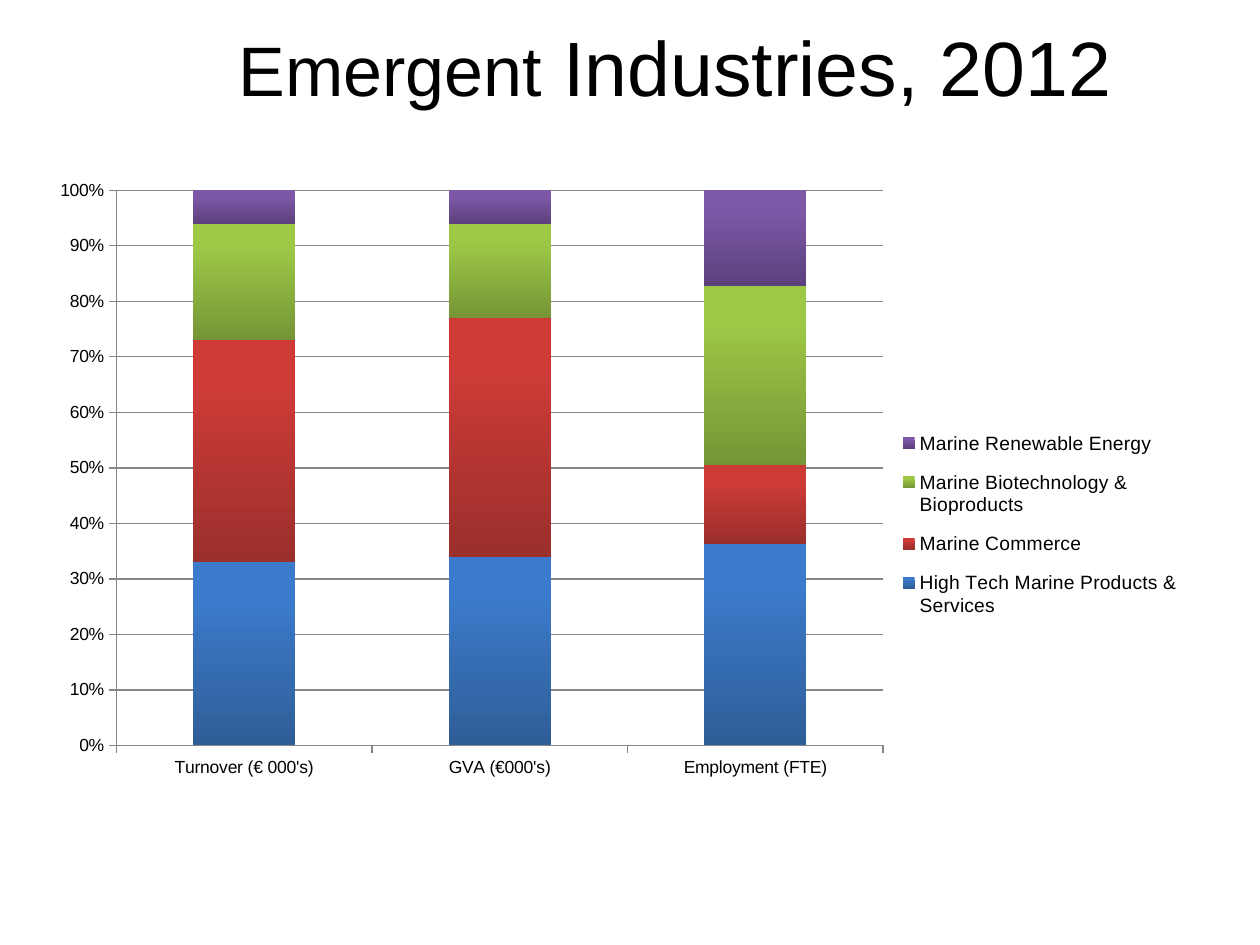
from lxml import etree
from pptx import Presentation
from pptx.chart.data import CategoryChartData
from pptx.dml.color import RGBColor
from pptx.enum.chart import XL_CHART_TYPE, XL_LEGEND_POSITION, XL_TICK_MARK
from pptx.enum.text import MSO_ANCHOR, PP_ALIGN
from pptx.oxml.ns import qn
from pptx.util import Pt

FONT = "Arial"
INK = "000000"
GRID_GREY = "868686"
MEASURES = ["Turnover (€ 000's)", "GVA (€000's)", "Employment (FTE)"]
# Industry, percentage shares, gradient top and bottom
INDUSTRIES = [
    ("High Tech Marine Products & Services", (33, 34, 36), "3C7ACB", "2E5E97"),
    ("Marine Commerce", (40, 43, 14), "CE3B37", "9B2F2C"),
    ("Marine Biotechnology & Bioproducts", (21, 17, 32), "9DC846", "769536"),
    ("Marine Renewable Energy", (6, 6, 17), "7D58A7", "5D417E"),
]


def colour(hex_string):
    return RGBColor.from_string(hex_string)


def style_font(font, size):
    font.name = FONT
    font.size = Pt(size)
    font.color.rgb = colour(INK)


def add_title(slide, runs):
    title = slide.shapes.title
    title.left, title.top, title.width, title.height = Pt(88), Pt(3.5), Pt(596), Pt(68)
    frame = title.text_frame
    frame.word_wrap = True
    frame.vertical_anchor = MSO_ANCHOR.MIDDLE
    paragraph = frame.paragraphs[0]
    paragraph.alignment = PP_ALIGN.CENTER
    for text, size in runs:
        run = paragraph.add_run()
        run.text = text
        style_font(run.font, size)


def place(element, index, inner=False, **fractions):
    """Give a chart part a fixed place, in fractions of the chart."""
    for old in element.findall(qn("c:layout")):
        element.remove(old)
    layout = etree.Element(qn("c:layout"))
    manual = etree.SubElement(layout, qn("c:manualLayout"))
    if inner:
        etree.SubElement(manual, qn("c:layoutTarget")).set("val", "inner")
    for mode in ("xMode", "yMode"):
        etree.SubElement(manual, qn(f"c:{mode}")).set("val", "edge")
    for name, value in fractions.items():
        etree.SubElement(manual, qn(f"c:{name}")).set("val", str(value))
    element.insert(index, layout)


def shade(fill, top, bottom):
    fill.gradient()
    fill.gradient_angle = 270
    for stop, position, tone in zip(fill.gradient_stops, (0.2, 1), (top, bottom)):
        stop.position = position
        stop.color.rgb = colour(tone)


def style_axis(axis):
    style_font(axis.tick_labels.font, 10)
    axis.major_tick_mark = XL_TICK_MARK.OUTSIDE
    axis.minor_tick_mark = XL_TICK_MARK.NONE
    axis.format.line.color.rgb = colour(GRID_GREY)
    axis.format.line.width = Pt(0.75)


def add_share_chart(slide):
    data = CategoryChartData()
    data.categories = MEASURES
    for industry, shares, _, _ in INDUSTRIES:
        data.add_series(industry, shares)
    chart = slide.shapes.add_chart(
        XL_CHART_TYPE.COLUMN_STACKED_100, Pt(20), Pt(94.5), Pt(664), Pt(356.5), data
    ).chart
    chart.has_title = False
    style_font(chart.font, 10)

    # Columns
    plot = chart.plots[0]
    plot.gap_width = 150
    plot.overlap = 100
    plot.vary_by_categories = False
    for series, (_, _, top, bottom) in zip(plot.series, INDUSTRIES):
        shade(series.format.fill, top, bottom)
        series.format.line.fill.background()

    # Axes and gridlines
    style_axis(chart.category_axis)
    shares_axis = chart.value_axis
    style_axis(shares_axis)
    shares_axis.minimum_scale, shares_axis.maximum_scale = 0, 1
    shares_axis.major_unit = 0.1
    shares_axis.tick_labels.number_format = "0%"
    shares_axis.tick_labels.number_format_is_linked = False
    shares_axis.has_major_gridlines = True
    gridline = shares_axis.major_gridlines.format.line
    gridline.color.rgb = colour(GRID_GREY)
    gridline.width = Pt(0.75)

    # Legend
    chart.has_legend = True
    legend = chart.legend
    legend.position = XL_LEGEND_POSITION.RIGHT
    legend.include_in_layout = False
    style_font(legend.font, 11)

    plot_area = chart.element.find(".//" + qn("c:plotArea"))
    place(plot_area, 0, inner=True, x=0.07, y=0.04, w=0.66, h=0.89)
    place(chart.element.find(".//" + qn("c:legend")), 1, x=0.74, y=0.4, w=0.25, h=0.35)


def main():
    deck = Presentation()
    deck.slide_width, deck.slide_height = Pt(720), Pt(540)
    slide = deck.slides.add_slide(deck.slide_layouts[5])
    add_title(slide, [("Emergent", 40), (" Industries, 2012", 44)])
    add_share_chart(slide)
    deck.save("out.pptx")


if __name__ == "__main__":
    main()
